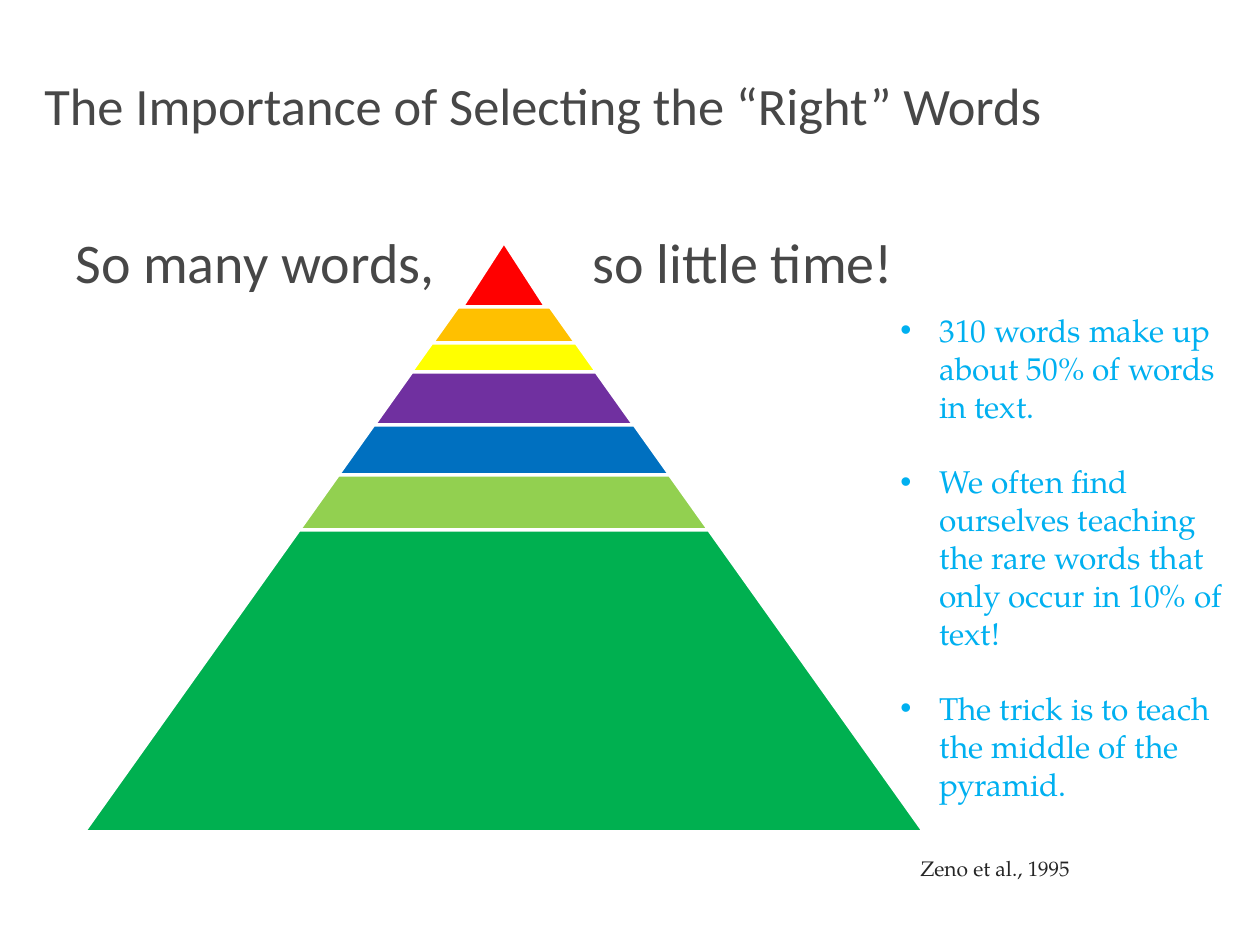
from lxml.etree import SubElement
from pptx import Presentation
from pptx.dml.color import RGBColor
from pptx.enum.shapes import MSO_SHAPE
from pptx.enum.text import MSO_ANCHOR
from pptx.oxml.ns import qn
from pptx.util import Emu, Pt

EMU_PER_PX = 914400 / 126
SERIF = "TeX Gyre Pagella"


def px(n):
    return Emu(round(n * EMU_PER_PX))


def add_text(x, y, w, h, lines, size, font, color):
    """Add a wrapped text box with one paragraph per line; return its frame."""
    tf = s.shapes.add_textbox(px(x), px(y), px(w), px(h)).text_frame
    tf.word_wrap = True
    for i, line in enumerate(lines):
        p = tf.add_paragraph() if i else tf.paragraphs[0]
        r = p.add_run()
        r.text = line
        r.font.size = Pt(size)
        r.font.name = font
        r.font.color.rgb = RGBColor.from_string(color)
    return tf


prs = Presentation()
prs.slide_width, prs.slide_height = px(1260), px(945)
s = prs.slides.add_slide(prs.slide_layouts[6])

title = add_text(32, 32, 1207, 145, ["The Importance of Selecting the “Right” Words"],
                 30, "Calibri", "474747")
title.vertical_anchor = MSO_ANCHOR.MIDDLE

# The tab carries the second half of the line past the pyramid's tip
tagline = add_text(63, 221, 1134, 624, ["So many words,\tso little time!"],
                   32, "Calibri", "474747")
tabs = SubElement(tagline.paragraphs[0]._p.get_or_add_pPr(), qn("a:tabLst"))
SubElement(tabs, qn("a:tab"), pos=str(px(517)), algn="l")

add_text(908, 849, 347, 38, ["Zeno et al., 1995"], 12, SERIF, "262626")

# Pyramid bands: bottom edge and colour, widening at a constant slope
CENTER, APEX, SLOPE = 504, 242, 0.712
bands = [(307, "FF0000"), (343, "FFC000"), (372, "FFFF00"), (425, "7030A0"),
         (475, "0070C0"), (530, "92D050"), (832, "00B050")]
top = APEX
for bottom, color in bands:
    # The tip is slightly narrower than the slope gives
    half = 42 if top == APEX else round(SLOPE * (bottom - APEX))
    sp = s.shapes.add_shape(MSO_SHAPE.TRAPEZOID, px(CENTER - half), px(top),
                            px(2 * half), px(bottom - top))
    sp.adjustments[0] = SLOPE
    sp.shadow.inherit = False
    sp.fill.solid()
    sp.fill.fore_color.rgb = RGBColor.from_string(color)
    sp.line.color.rgb = RGBColor.from_string("FFFFFF")
    sp.line.width = Pt(2)
    top = bottom

points = add_text(888, 305, 368, 509, [
    "310 words make up about 50% of words in text.",
    "We often find ourselves teaching the rare words that only occur in 10% of text!",
    "The trick is to teach the middle of the pyramid.",
], 18, SERIF, "00B0F0")
for i, p in enumerate(points.paragraphs):
    if i:
        p.space_before = Pt(21.6)
    pPr = p._p.get_or_add_pPr()
    pPr.set("marL", str(px(39)))
    pPr.set("indent", str(-px(39)))
    SubElement(pPr, qn("a:buFont"), typeface="Arial")
    SubElement(pPr, qn("a:buChar"), char="•")

prs.save("out.pptx")
